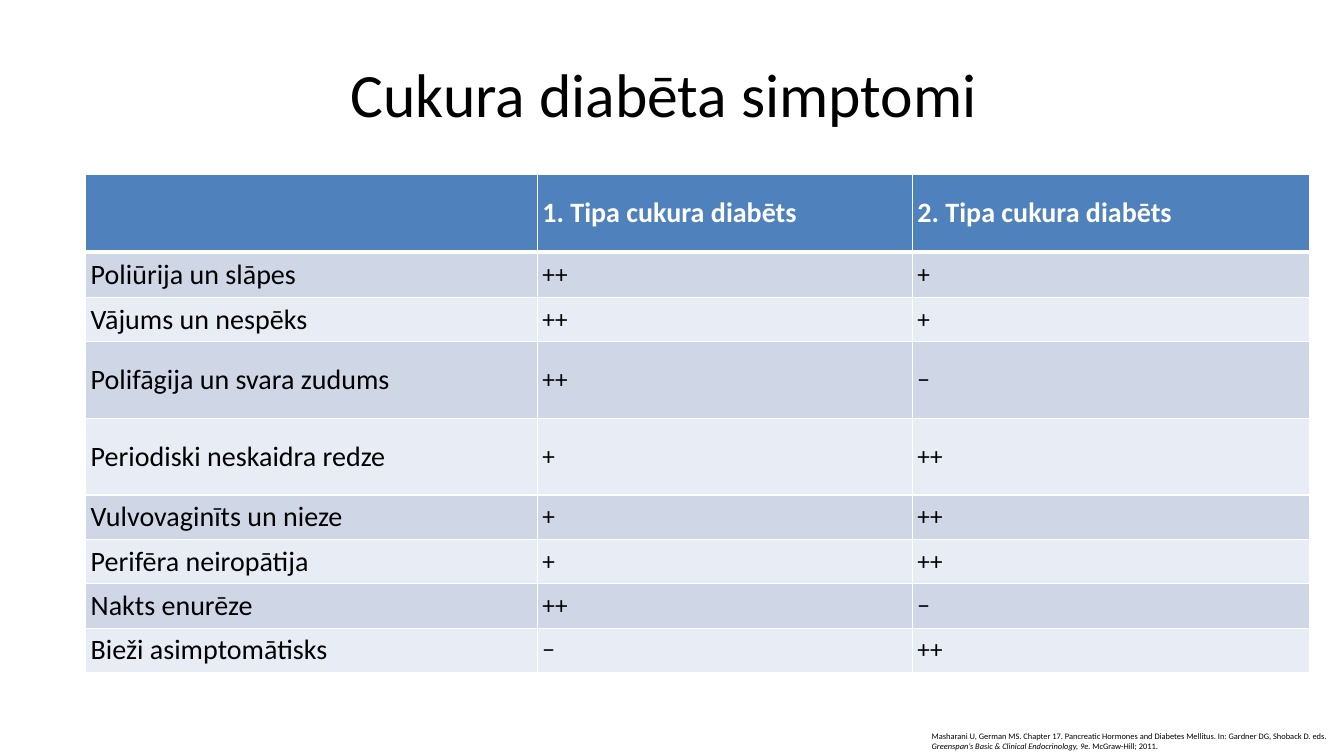
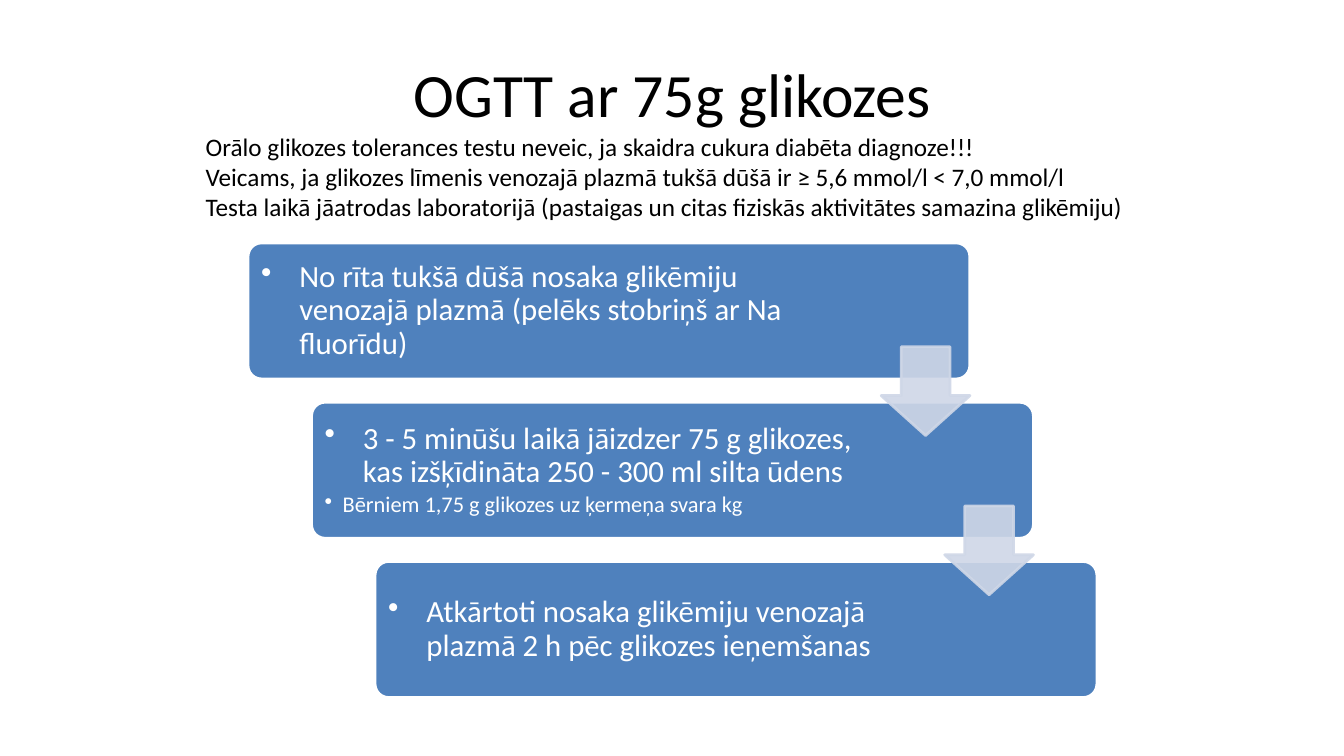
from dataclasses import dataclass

from lxml.etree import SubElement
from pptx import Presentation
from pptx.dml.color import RGBColor
from pptx.enum.shapes import MSO_SHAPE as SHAPE
from pptx.enum.text import MSO_ANCHOR as ANCHOR, PP_ALIGN as ALIGN
from pptx.oxml import parse_xml
from pptx.oxml.ns import nsdecls, qn
from pptx.util import Inches, Pt


@dataclass(frozen=True)
class Theme:
    font: str = "Calibri"
    blue: str = "4F81BD"
    band_dark: str = "CFD7E7"
    band_light: str = "E8ECF4"
    white: str = "FFFFFF"
    black: str = "000000"
    title: int = 44
    step: int = 22
    label: int = 20
    body: int = 18
    detail: int = 16
    source: int = 6
    inset: float = 0.05


T = Theme()

SYMPTOMS = [
    ("", "1. Tipa cukura diabēts", "2. Tipa cukura diabēts"),
    ("Poliūrija un slāpes", "++", "+"),
    ("Vājums un nespēks", "++", "+"),
    ("Polifāgija un svara zudums", "++", "−"),
    ("Periodiski neskaidra redze", "+", "++"),
    ("Vulvovaginīts un nieze", "+", "++"),
    ("Perifēra neiropātija", "+", "++"),
    ("Nakts enurēze", "++", "−"),
    ("Bieži asimptomātisks", "−", "++"),
]
COL_WIDTHS = [4.48, 3.72, 3.94]
ROW_HEIGHTS = [0.77, 0.45, 0.44, 0.76, 0.76, 0.44, 0.44, 0.44, 0.44]

SOURCE = [
    ("Masharani U, German MS. Chapter 17. Pancreatic Hormones and Diabetes Mellitus. "
     "In: Gardner DG, Shoback D. eds. ", False),
    ("Greenspan’s Basic & Clinical Endocrinology, 9e. ", True),
    ("McGraw-Hill; 2011.", False),
]

RULES = [
    "Orālo glikozes tolerances testu neveic, ja skaidra cukura diabēta diagnoze!!!",
    "Veicams, ja glikozes līmenis venozajā plazmā tukšā dūšā ir ≥ 5,6 mmol/l < 7,0 mmol/l",
    "Testa laikā jāatrodas laboratorijā (pastaigas un citas fiziskās aktivitātes samazina glikēmiju)",
]

STEPS = [
    ("No rīta tukšā dūšā nosaka glikēmiju venozajā plazmā (pelēks stobriņš ar Na fluorīdu)", None),
    ("3 - 5 minūšu laikā jāizdzer 75 g glikozes, kas izšķīdināta 250 - 300 ml silta ūdens",
     "Bērniem 1,75 g glikozes uz ķermeņa svara kg"),
    ("Atkārtoti nosaka glikēmiju venozajā plazmā 2 h pēc glikozes ieņemšanas", None),
]


def rgb(value):
    return RGBColor.from_string(value)


def write(tf, text, size=T.body, color=T.black, bold=False, align=ALIGN.LEFT,
          bullet=None, spacing=None, before=None, add=False):
    p = tf.add_paragraph() if add else tf.paragraphs[0]
    p.alignment = align
    if spacing:
        p.line_spacing = spacing
    if before:
        p.space_before = Pt(before)
    if bullet:
        pPr = p._p.get_or_add_pPr()
        pPr.set("marL", str(Inches(bullet)))
        pPr.set("indent", str(-Inches(bullet)))
        SubElement(pPr, qn("a:buChar")).set("char", "•")
    runs = [(text, False)] if isinstance(text, str) else text
    for part, italic in runs:
        r = p.add_run()
        r.text = part
        r.font.name = T.font
        r.font.size = Pt(size)
        r.font.bold = bold
        r.font.italic = italic
        r.font.color.rgb = rgb(color)


def frame(tf, inset=T.inset, anchor=ANCHOR.TOP, right=None):
    tf.word_wrap = True
    tf.vertical_anchor = anchor
    tf.margin_left = tf.margin_top = tf.margin_bottom = Inches(inset)
    tf.margin_right = Inches(inset if right is None else right)
    return tf


def text_box(s, x, y, w, h):
    return frame(s.shapes.add_textbox(Inches(x), Inches(y), Inches(w), Inches(h)).text_frame)


def shape(s, kind, x, y, w, h, fill, line, adjustments):
    sp = s.shapes.add_shape(kind, Inches(x), Inches(y), Inches(w), Inches(h))
    sp.shadow.inherit = False
    sp.fill.solid()
    sp.fill.fore_color.rgb = rgb(fill)
    sp.line.color.rgb = rgb(line)
    sp.line.width = Pt(2)
    for i, value in enumerate(adjustments):
        sp.adjustments[i] = value
    return sp


def titled_slide(prs, title, x, w):
    s = prs.slides.add_slide(prs.slide_layouts[5])
    sp = s.shapes.title
    sp.left, sp.top, sp.width, sp.height = Inches(x), Inches(0.3), Inches(w), Inches(1.25)
    write(frame(sp.text_frame, anchor=ANCHOR.MIDDLE), title, size=T.title, align=ALIGN.CENTER)
    return s


def cell_borders(cell, top=1, bottom=1):
    tcPr = cell._tc.get_or_add_tcPr()
    widths = {"lnL": 1, "lnR": 1, "lnT": top, "lnB": bottom}
    for i, (side, width) in enumerate(widths.items()):
        tcPr.insert(i, parse_xml(
            f'<a:{side} {nsdecls("a")} w="{Pt(width)}"><a:solidFill>'
            f'<a:srgbClr val="{T.white}"/></a:solidFill></a:{side}>'))


def symptom_table(s, x, y):
    tbl = s.shapes.add_table(
        len(SYMPTOMS), len(COL_WIDTHS), Inches(x), Inches(y),
        Inches(sum(COL_WIDTHS)), Inches(sum(ROW_HEIGHTS))).table
    for col, width in zip(tbl.columns, COL_WIDTHS):
        col.width = Inches(width)
    for i, (row, height, texts) in enumerate(zip(tbl.rows, ROW_HEIGHTS, SYMPTOMS)):
        row.height = Inches(height)
        header = i == 0
        band = T.blue if header else T.band_dark if i % 2 else T.band_light
        for j, (cell, text) in enumerate(zip(row.cells, texts)):
            cell.fill.solid()
            cell.fill.fore_color.rgb = rgb(band)
            cell_borders(cell, top=3 if i == 1 else 1, bottom=3 if header else 1)
            cell.vertical_anchor = ANCHOR.MIDDLE
            cell.margin_left = cell.margin_right = Inches(T.inset)
            cell.margin_top = cell.margin_bottom = Inches(T.inset)
            if text:
                write(cell.text_frame, text, bold=header,
                      size=T.label if header or j == 0 else T.body,
                      color=T.white if header else T.black)


def step_box(s, x, y, w, h, text, detail):
    sp = shape(s, SHAPE.ROUNDED_RECTANGLE, x, y, w, h, T.blue, T.white, [0.1])
    tf = frame(sp.text_frame, inset=0.09, anchor=ANCHOR.MIDDLE, right=1.6)
    write(tf, text, size=T.step, color=T.white, bullet=0.38, spacing=0.9)
    if detail:
        write(tf, detail, size=T.detail, color=T.white, bullet=0.18, spacing=0.9,
              before=3, add=True)


def step_arrow(s, x, y, side):
    sp = shape(s, SHAPE.DOWN_ARROW, x, y, side, side, T.band_dark, T.band_dark, [0.55, 0.45])
    for clr in sp._element.spPr.iter(qn("a:srgbClr")):
        SubElement(clr, qn("a:alpha")).set("val", "90000")


def step_cascade(s, x, y, w=7.16, h=1.35, dx=0.63, dy=1.58, arrow=0.88):
    corners = [(x + i * dx, y + i * dy) for i in range(len(STEPS))]
    for (left, top), (text, detail) in zip(corners, STEPS):
        step_box(s, left, top, w, h, text, detail)
    for left, top in corners[:-1]:
        step_arrow(s, left + w - arrow, top + 1.03, arrow)


def symptoms_slide(prs):
    s = titled_slide(prs, "Cukura diabēta simptomi", 1.86, 9.45)
    symptom_table(s, 0.85, 1.73)
    write(text_box(s, 9.19, 7.2, 4.09, 0.3), SOURCE, size=T.source)


def test_slide(prs):
    s = titled_slide(prs, "OGTT ar 75g glikozes", 2.17, 9)
    step_cascade(s, 2.46, 2.41)
    tf = text_box(s, 1.99, 1.25, 9.4, 1.1)
    for i, rule in enumerate(RULES):
        write(tf, rule, add=i > 0)


def main():
    prs = Presentation()
    prs.slide_width, prs.slide_height = Inches(13.33), Inches(7.5)
    symptoms_slide(prs)
    test_slide(prs)
    prs.save("out.pptx")


if __name__ == "__main__":
    main()
